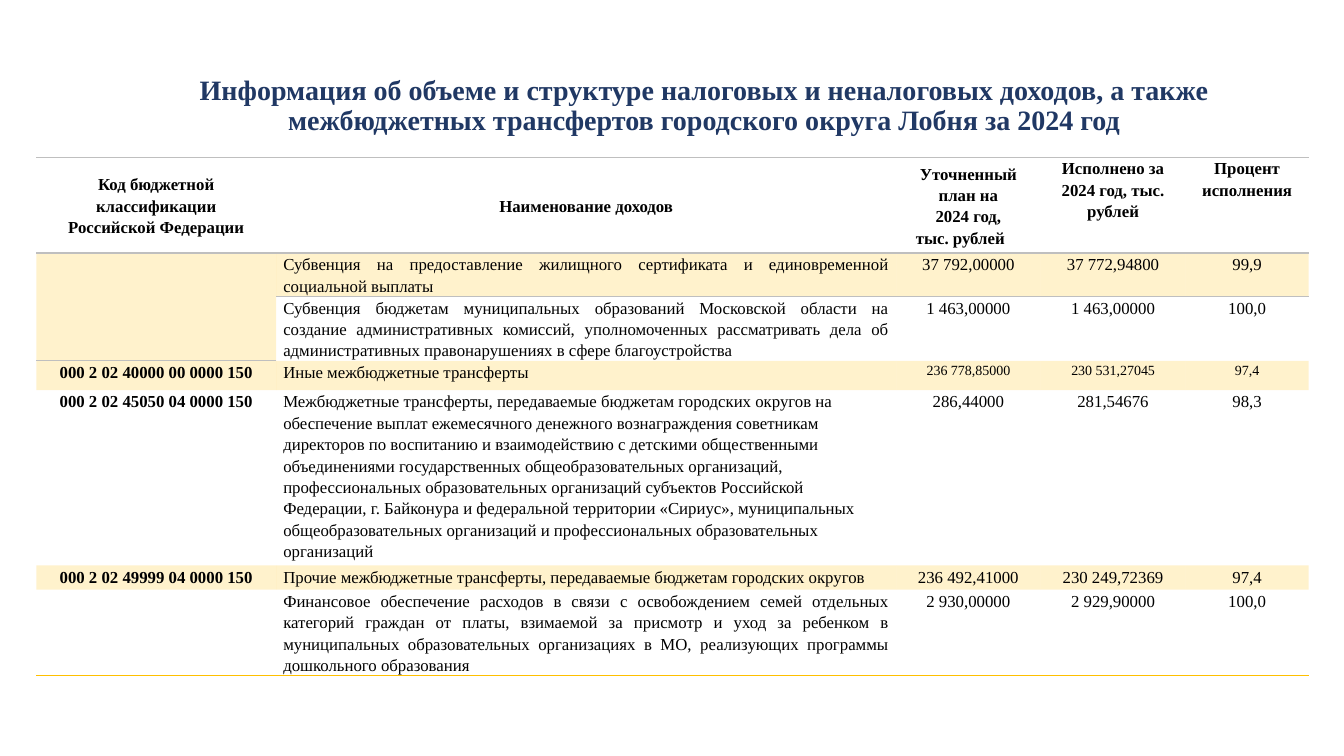
from dataclasses import dataclass
from typing import NamedTuple

from lxml.etree import SubElement
from pptx import Presentation
from pptx.dml.color import RGBColor as Rgb
from pptx.enum.text import MSO_ANCHOR as Anchor, MSO_AUTO_SIZE as AutoSize, PP_ALIGN as Align
from pptx.oxml.ns import qn
from pptx.util import Inches, Pt


@dataclass(frozen=True)
class Theme:
    font: str = "Times New Roman"
    title_color: str = "203864"
    text_color: str = "000000"
    accent: str = "FFC000"
    header_line: str = "BFBFBF"
    tint_percent: int = 20
    title_size: int = 20
    body_size: int = 12
    small_size: int = 10
    line_width: int = 1
    plain_style: str = "{2D5ABB26-0587-4C30-8999-92F81FD0307C}"


class Heading(NamedTuple):
    lines: tuple[str, ...]
    anchor: Anchor = Anchor.MIDDLE
    last_indent: float = 0


class Income(NamedTuple):
    height: float
    code: str
    name: str
    plan: str
    done: str
    percent: str
    tinted: bool = False
    name_align: Align = Align.JUSTIFY
    number_size: int = Theme.body_size


THEME = Theme()
WIDTH, HEIGHT = 13.33, 7.5
TABLE_LEFT, TABLE_TOP = 0.36, 1.56
COLUMNS = (2.38, 6.15, 1.43, 1.44, 1.22)
HEADER_HEIGHT = 0.95
HEADER_INSET, BODY_INSET = 0.04, 0.07

TITLE = ("Информация об объеме и структуре налоговых и неналоговых доходов, а также "
         "межбюджетных трансфертов городского округа Лобня за 2024 год")

HEADINGS = (
    Heading(("Код бюджетной классификации", "Российской Федерации")),
    Heading(("Наименование доходов",)),
    Heading(("Уточненный план на", "2024 год,", "тыс. рублей"), last_indent=0.16),
    Heading(("Исполнено за 2024 год, тыс. рублей",), Anchor.TOP),
    Heading(("Процент исполнения",), Anchor.TOP),
)

INCOMES = (
    Income(0.43, "", "Субвенция на предоставление жилищного сертификата и единовременной "
           "социальной выплаты", "37 792,00000", "37 772,94800", "99,9", tinted=True),
    Income(0.64, "", "Субвенция бюджетам муниципальных образований Московской области на "
           "создание административных комиссий, уполномоченных рассматривать дела об "
           "административных правонарушениях в сфере благоустройства",
           "1 463,00000", "1 463,00000", "100,0"),
    Income(0.29, "000 2 02 40000 00 0000 150", "Иные межбюджетные трансферты",
           "236 778,85000", "230 531,27045", "97,4", tinted=True,
           number_size=THEME.small_size),
    Income(1.74, "000 2 02 45050 04 0000 150",
           "Межбюджетные трансферты, передаваемые бюджетам городских округов на "
           "обеспечение выплат ежемесячного денежного вознаграждения советникам "
           "директоров по воспитанию и взаимодействию с детскими общественными "
           "объединениями государственных общеобразовательных организаций, "
           "профессиональных образовательных организаций субъектов Российской "
           "Федерации, г. Байконура и федеральной территории «Сириус», муниципальных "
           "общеобразовательных организаций и профессиональных образовательных организаций",
           "286,44000", "281,54676", "98,3", name_align=Align.LEFT),
    Income(0.24, "000 2 02 49999 04 0000 150",
           "Прочие межбюджетные трансферты, передаваемые бюджетам городских округов",
           "236 492,41000", "230 249,72369", "97,4", tinted=True),
    Income(0.84, "", "Финансовое обеспечение расходов в связи с освобождением семей отдельных "
           "категорий граждан от платы, взимаемой за присмотр и уход за ребенком в "
           "муниципальных образовательных организациях в МО, реализующих программы "
           "дошкольного образования", "2 930,00000", "2 929,90000", "100,0"),
)


def write(frame, *lines: str, size: int = THEME.body_size, bold: bool = False,
          color: str = THEME.text_color, align: Align = Align.CENTER,
          spacing: float = 1.15, last_indent: float = 0) -> None:
    """Fill a text frame with one paragraph per line."""
    for index, line in enumerate(lines):
        para = frame.add_paragraph() if index else frame.paragraphs[0]
        para.alignment, para.line_spacing = align, spacing
        span = para.add_run()
        span.text = line
        span.font.name, span.font.size, span.font.bold = THEME.font, Pt(size), bold
        span.font.color.rgb = Rgb.from_string(color)
    if last_indent:
        para._p.get_or_add_pPr().set("marR", str(Inches(last_indent)))


def add_border(cell, side: str, color: str) -> None:
    line = SubElement(cell._tc.get_or_add_tcPr(), qn(f"a:{side}"), w=str(Pt(THEME.line_width)))
    SubElement(SubElement(line, qn("a:solidFill")), qn("a:srgbClr"), val=color)


def fill_cell(cell, tinted: bool) -> None:
    if not tinted:
        cell.fill.background()
        return
    cell.fill.solid()
    cell.fill.fore_color.rgb = Rgb.from_string(THEME.accent)
    tint = cell._tc.tcPr.find(f"{qn('a:solidFill')}/{qn('a:srgbClr')}")
    SubElement(tint, qn("a:alpha"), val=str(THEME.tint_percent * 1000))


def set_insets(cell, side: float) -> None:
    cell.margin_left = cell.margin_right = Inches(side)
    cell.margin_top = cell.margin_bottom = 0


def add_title(page) -> None:
    box = page.shapes.title
    box.left, box.top = Inches(1.43), Inches(0.55)
    box.width, box.height = Inches(11.11), Inches(1.01)
    frame = box.text_frame
    frame.word_wrap, frame.auto_size = True, AutoSize.NONE
    frame.vertical_anchor = Anchor.MIDDLE
    write(frame, TITLE, size=THEME.title_size, bold=True,
          color=THEME.title_color, spacing=0.9)


def add_income_table(page) -> None:
    heights = (HEADER_HEIGHT, *(income.height for income in INCOMES))
    table = page.shapes.add_table(
        len(heights), len(COLUMNS), Inches(TABLE_LEFT), Inches(TABLE_TOP),
        Inches(sum(COLUMNS)), Inches(sum(heights))).table
    table.first_row = table.horz_banding = False
    table._tbl.tblPr.find(qn("a:tableStyleId")).text = THEME.plain_style
    for column, width in zip(table.columns, COLUMNS):
        column.width = Inches(width)
    for row, height in zip(table.rows, heights):
        row.height = Inches(height)

    # Header row
    for cell, heading in zip(table.rows[0].cells, HEADINGS):
        set_insets(cell, HEADER_INSET)
        cell.vertical_anchor = heading.anchor
        for side in ("lnT", "lnB"):
            add_border(cell, side, THEME.header_line)
        fill_cell(cell, tinted=False)
        write(cell.text_frame, *heading.lines, bold=True, last_indent=heading.last_indent)

    # Income rows
    for number, income in enumerate(INCOMES, start=1):
        texts = (income.code, income.name, income.plan, income.done, income.percent)
        for column, (cell, text) in enumerate(zip(table.rows[number].cells, texts)):
            set_insets(cell, BODY_INSET)
            if number == 1:
                add_border(cell, "lnT", THEME.header_line)
            if number == len(INCOMES):
                add_border(cell, "lnB", THEME.accent)
            fill_cell(cell, income.tinted)
            if text:
                write(cell.text_frame, text, bold=column == 0,
                      size=income.number_size if column > 1 else THEME.body_size,
                      align=income.name_align if column == 1 else Align.CENTER)

    # The first two incomes share one code cell
    table.cell(1, 0).merge(table.cell(2, 0))


def main() -> None:
    deck = Presentation()
    deck.slide_width, deck.slide_height = Inches(WIDTH), Inches(HEIGHT)
    page = deck.slides.add_slide(deck.slide_layouts.get_by_name("Title Only"))
    add_title(page)
    add_income_table(page)
    deck.save("out.pptx")


if __name__ == "__main__":
    main()
